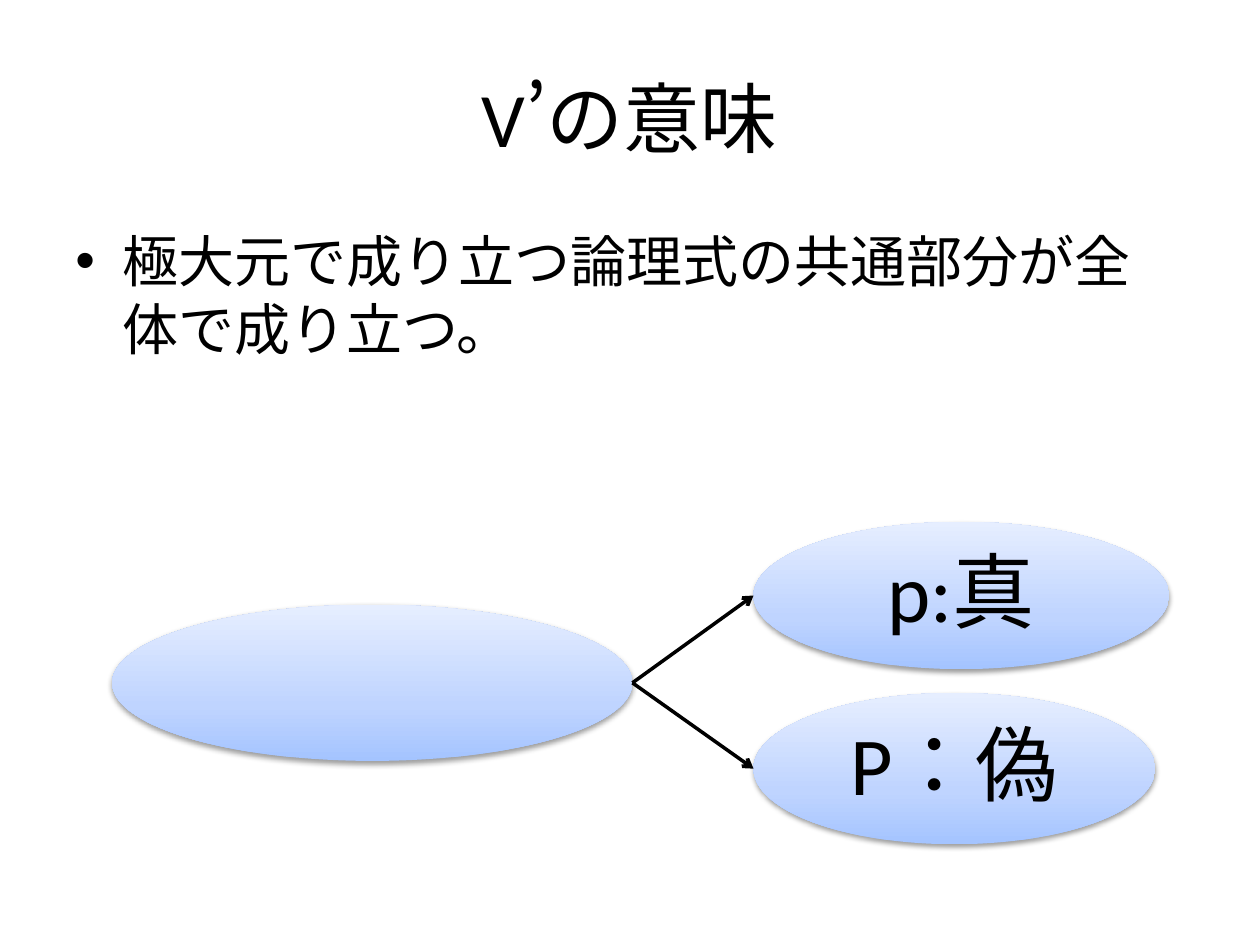
from copy import deepcopy

from lxml.etree import SubElement
from pptx import Presentation
from pptx.dml.color import RGBColor
from pptx.enum.lang import MSO_LANGUAGE_ID
from pptx.enum.shapes import MSO_CONNECTOR, MSO_SHAPE
from pptx.enum.text import MSO_ANCHOR, PP_ALIGN
from pptx.oxml.ns import qn
from pptx.util import Cm, Pt

FONT = "Calibri"
BLACK = "000000"
STOPS = [(0, "A4C4FF"), (0.35, "BFD4FF"), (1, "E6EEFF")]
ROOT = (2.26, 12.19, 10.49, 3.15)
LEAVES = [
    ("p:真", (15.19, 10.52, 8.38, 2.97)),
    ("P：偽", (15.19, 13.97, 8.1, 3.05)),
]


def color(code):
    return RGBColor.from_string(code)


def write(shape, text, size, align=PP_ALIGN.CENTER, anchor=MSO_ANCHOR.MIDDLE):
    frame = shape.text_frame
    frame.word_wrap = True
    frame.vertical_anchor = anchor
    frame.text = text
    para = frame.paragraphs[0]
    para.alignment = align
    font = para.runs[0].font
    font.name, font.size = FONT, Pt(size)
    font.color.rgb = color(BLACK)
    font.language_id = MSO_LANGUAGE_ID.JAPANESE
    return para


def add_text(slide, box, *args):
    return write(slide.shapes.add_textbox(*map(Cm, box)), *args)


def add_bullet(para, indent):
    props = para._p.get_or_add_pPr()
    props.set("marL", str(Cm(indent)))
    props.set("indent", str(-Cm(indent)))
    SubElement(props, qn("a:buFont"), typeface="Arial")
    SubElement(props, qn("a:buChar"), char="•")


def add_shade(shape):
    """Give the shape a soft shadow just below it."""
    shape.shadow.inherit = False
    effects = shape._element.spPr.find(qn("a:effectLst"))
    shade = SubElement(effects, qn("a:outerShdw"), blurRad=str(Pt(3.1)),
                       dist=str(Pt(1.6)), dir="5400000", rotWithShape="0")
    tint = SubElement(shade, qn("a:srgbClr"), val=BLACK)
    SubElement(tint, qn("a:alpha"), val="38000")


def add_node(slide, box):
    node = slide.shapes.add_shape(MSO_SHAPE.OVAL, *map(Cm, box))
    node.line.fill.background()
    fill = node.fill
    fill.gradient()
    fill.gradient_angle = 90
    stops = node._element.spPr.find(".//" + qn("a:gsLst"))
    stops.append(deepcopy(stops[-1]))
    for stop, (place, code) in zip(fill.gradient_stops, STOPS):
        stop.position = place
        stop.color.rgb = color(code)
    add_shade(node)
    return node


def add_label(node, text):
    frame = node.text_frame
    frame.margin_left = frame.margin_right = Cm(0.08)
    frame.margin_top = frame.margin_bottom = Cm(0.08)
    write(node, text, 47).line_spacing = 0.9


def add_arrow(slide, start, end):
    """Join the right side of one node to the left side of another."""
    arrow = slide.shapes.add_connector(
        MSO_CONNECTOR.STRAIGHT,
        start.left + start.width, start.top + start.height // 2,
        end.left, end.top + end.height // 2)
    arrow.line.width = Pt(2)
    arrow.line.color.rgb = color(BLACK)
    props = arrow._element.spPr
    SubElement(props.find(qn("a:ln")), qn("a:tailEnd"), type="arrow")
    SubElement(props, qn("a:effectLst"))


def main():
    deck = Presentation()
    deck.slide_width, deck.slide_height = Cm(25.4), Cm(19.05)
    slide = deck.slides.add_slide(deck.slide_layouts[6])

    add_text(slide, (1.27, 0.76, 22.86, 3.18), "V’の意味", 44)
    body = add_text(slide, (1.27, 4.45, 22.86, 12.57),
                    "極大元で成り立つ論理式の共通部分が全体で成り立つ。",
                    32, PP_ALIGN.LEFT, MSO_ANCHOR.TOP)
    add_bullet(body, 0.95)

    root = add_node(slide, ROOT)
    for text, box in LEAVES:
        leaf = add_node(slide, box)
        add_label(leaf, text)
        add_arrow(slide, root, leaf)
    deck.save("out.pptx")


if __name__ == "__main__":
    main()
